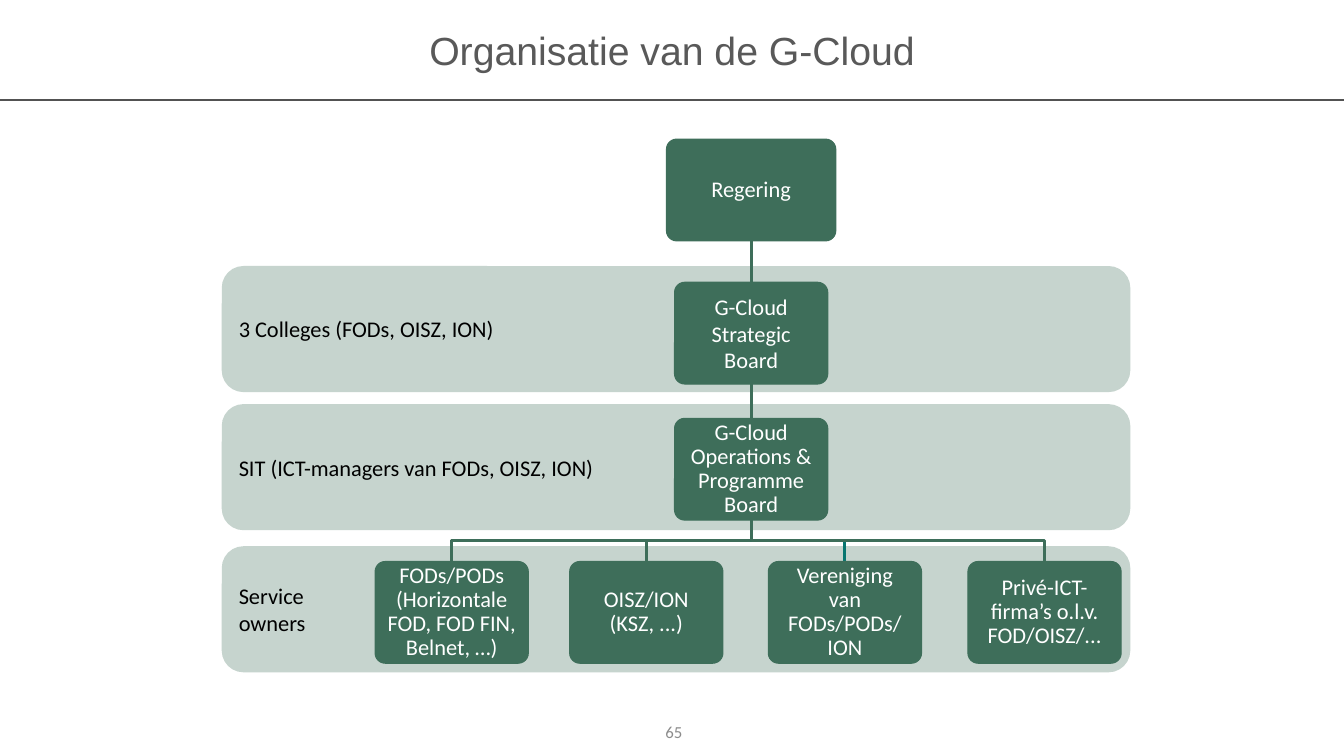
from pptx import Presentation
from pptx.dml.color import RGBColor
from pptx.enum.shapes import MSO_CONNECTOR as Conn, MSO_SHAPE as Shape
from pptx.enum.text import MSO_ANCHOR as Anchor, PP_ALIGN as Align
from pptx.oxml.ns import qn
from pptx.util import Inches, Pt
from lxml import etree

# Content
TITLE = "Organisatie van de G-Cloud"
PAGE = "65"
GREEN, PALE, TEAL = "3E6E5A", "C6D4CE", "087670"

# text, top
BANDS = [
    ("3 Colleges (FODs, OISZ, ION)", 2.65),
    ("SIT (ICT-managers van FODs, OISZ, ION)", 4.02),
    ("Service\nowners", 5.43),
]
# text, top, width, line spacing
BOARDS = [
    ("Regering", 1.38, 1.68, 0.9),
    ("G-Cloud Strategic Board", 2.8, 1.52, 1.0),
    ("G-Cloud Operations & Programme Board", 4.15, 1.52, 0.9),
]
# text, centre, line colour
OWNERS = [
    ("FODs/PODs\v(Horizontale FOD, FOD FIN, Belnet, …)", 4.48, GREEN),
    ("OISZ/ION (KSZ, ...)", 6.41, GREEN),
    ("Vereniging van FODs/PODs/ ION", 8.38, TEAL),
    ("Privé-ICT-firma’s o.l.v. FOD/OISZ/...", 10.36, GREEN),
]
AXIS, BOX_W, BOX_H, OWNER_TOP = 7.45, 1.52, 1.01, 5.57

deck = Presentation()
deck.slide_width, deck.slide_height = Inches(13.33), Inches(7.5)
slide = deck.slides.add_slide(deck.slide_layouts[6])
shapes = slide.shapes


def color(code):
    return RGBColor.from_string(code)


def write(shape, text, size, ink, align=Align.CENTER, font="Calibri", gap=1.0):
    frame = shape.text_frame
    frame.text = text
    frame.word_wrap = True
    frame.vertical_anchor = Anchor.MIDDLE
    for para in frame.paragraphs:
        para.alignment = align
        para.line_spacing = gap
        for run in para.runs:
            run.font.name, run.font.size = font, Pt(size)
            run.font.color.rgb = color(ink)


def label(text, left, top, width, height, size, ink, font="Calibri"):
    box = shapes.add_textbox(*map(Inches, (left, top, width, height)))
    write(box, text, size, ink, font=font)


def panel(left, top, width, height, fill, edge):
    shape = shapes.add_shape(Shape.ROUNDED_RECTANGLE,
                             *map(Inches, (left, top, width, height)))
    shape.shadow.inherit = False
    shape.fill.solid()
    shape.fill.fore_color.rgb = color(fill)
    shape.line.color.rgb = color(fill)
    shape.line.width = Pt(edge)
    return shape


def node(text, mid, top, width=BOX_W, gap=0.9):
    box = panel(mid - width / 2, top, width, BOX_H, GREEN, 0.75)
    box.adjustments[0] = 0.1
    frame = box.text_frame
    frame.margin_left = frame.margin_right = Inches(0.07)
    frame.margin_top = frame.margin_bottom = Inches(0.07)
    write(box, text, 16, "FFFFFF", gap=gap)


def rule(x1, y1, x2, y2, ink, width):
    line = shapes.add_connector(Conn.STRAIGHT, *map(Inches, (x1, y1, x2, y2)))
    line.line.color.rgb = color(ink)
    line.line.width = Pt(width)
    etree.SubElement(line._element.spPr, qn("a:effectLst"))


def elbow(mid, top, ink):
    turn = (top + OWNER_TOP) / 2
    pen = shapes.build_freeform(Inches(AXIS), Inches(top))
    bends = [(AXIS, turn), (mid, turn), (mid, OWNER_TOP)]
    pen.add_line_segments([(Inches(x), Inches(y)) for x, y in bends], close=False)
    line = pen.convert_to_shape()
    line.shadow.inherit = False
    line.fill.background()
    line.line.color.rgb = color(ink)
    line.line.width = Pt(2)


# Heading
rule(0, 0.99, 13.33, 0.99, "525252", 1.5)
label(TITLE, 0, 0, 13.33, 0.99, 28, "595959", "Arial")

# Bands
for text, top in BANDS:
    write(panel(2.21, top, 8.99, 1.23, PALE, 1.5), text, 16, "000000", Align.LEFT)

# Chain of boards
foot = None
for text, top, width, gap in BOARDS:
    if foot is not None:
        rule(AXIS, foot, AXIS, top, GREEN, 2)
    node(text, AXIS, top, width, gap)
    foot = top + BOX_H

# Service owners
for text, mid, ink in OWNERS:
    elbow(mid, foot, ink)
    node(text, mid, OWNER_TOP)

# Page number
label(PAGE, 5.13, 7.06, 3.11, 0.4, 12, "8C8C8C")

deck.save("out.pptx")
